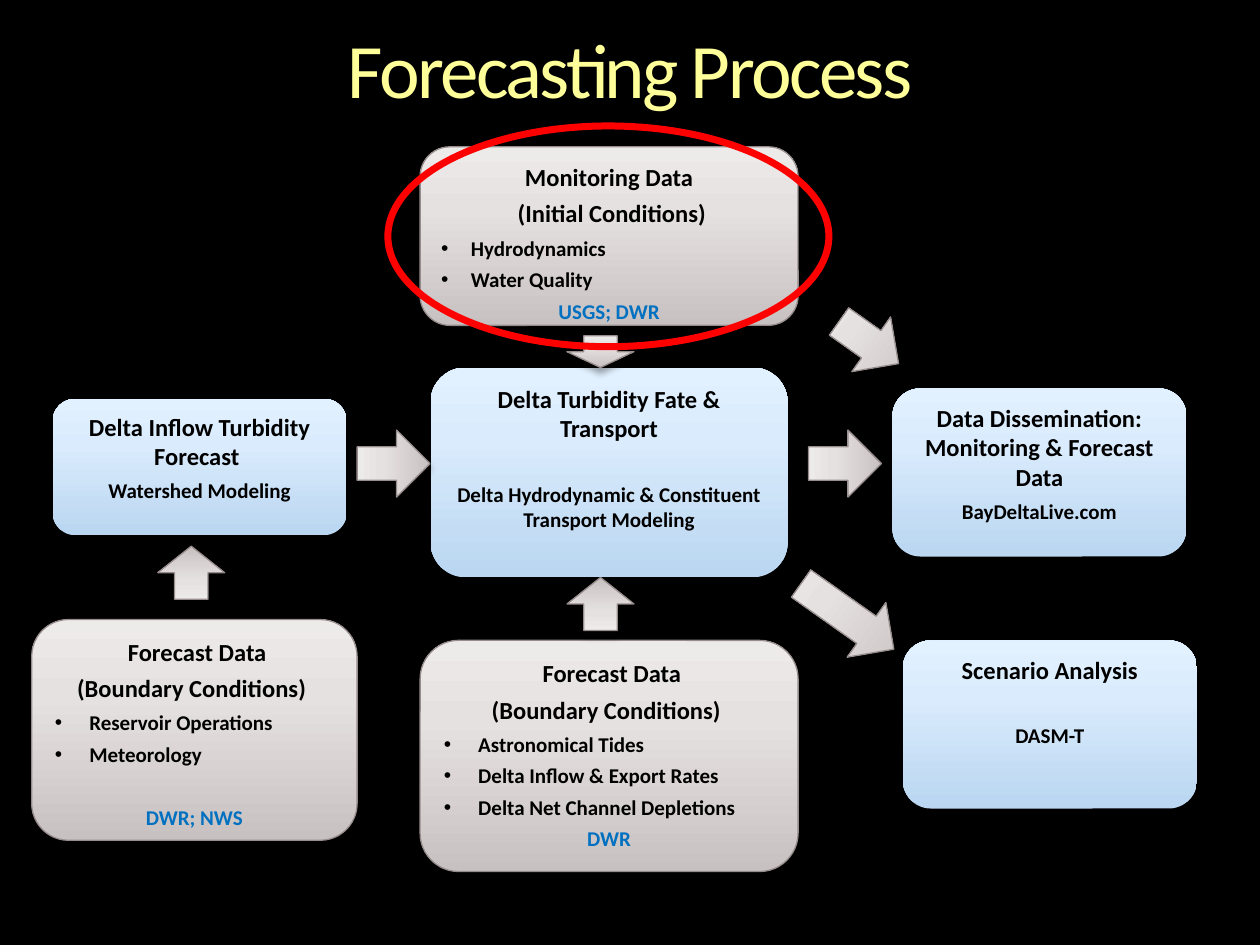
import lxml.etree
import pptx
import pptx.dml.color
import pptx.enum.shapes
import pptx.enum.text
import pptx.oxml.ns
import pptx.util

Cm = pptx.util.Cm
Pt = pptx.util.Pt
RGB = pptx.dml.color.RGBColor
SHAPE = pptx.enum.shapes.MSO_SHAPE
ALIGN = pptx.enum.text.PP_ALIGN
ANCHOR = pptx.enum.text.MSO_ANCHOR
qn = pptx.oxml.ns.qn

BLACK = RGB(0x00, 0x00, 0x00)
YELLOW = RGB(0xFF, 0xFF, 0x99)
RED = RGB(0xFF, 0x00, 0x00)
BLUE = RGB(0x00, 0x70, 0xC0)
EDGE = RGB(0x96, 0x8C, 0x8C)
GREY = (RGB(0xC8, 0xC1, 0xC1), RGB(0xE6, 0xE1, 0xE1), RGB(0xED, 0xEA, 0xEA))
SKY = (RGB(0xBA, 0xD6, 0xF1), RGB(0xD9, 0xEB, 0xFC), RGB(0xE2, 0xF1, 0xFF))
STOPS = (0, 65, 100)

# Text roles: size, colour, bulleted
ROLES = {
    "head": (14, BLACK, False),
    "item": (12, BLACK, True),
    "note": (12, BLACK, False),
    "source": (12, BLUE, False),
}
GAP = 18  # points left free above a line that is set apart

BOXES = [
    (GREY, (8.47, 2.96, 7.62, 3.6), [
        ("head", "Monitoring Data"), ("head", " (Initial Conditions)"),
        ("item", "Hydrodynamics"), ("item", "Water Quality"),
        ("source", "USGS; DWR")]),
    (GREY, (8.47, 12.91, 7.62, 4.66), [
        ("head", " Forecast Data"), ("head", "(Boundary Conditions) "),
        ("item", " Astronomical Tides"),
        ("item", " Delta Inflow & Export Rates"),
        ("item", " Delta Net Channel Depletions"), ("source", "DWR")]),
    (SKY, (1.06, 8.04, 5.93, 2.75), [
        ("head", "Delta Inflow Turbidity Forecast "),
        ("note", "Watershed Modeling")]),
    (SKY, (8.68, 7.41, 7.2, 4.23), [
        ("head", "Delta Turbidity Fate & Transport"),
        ("note", "Delta Hydrodynamic & Constituent Transport Modeling", GAP)]),
    (GREY, (0.64, 12.49, 6.56, 4.45), [
        ("head", " Forecast Data"), ("head", "(Boundary Conditions) "),
        ("item", " Reservoir Operations"), ("item", " Meteorology"),
        ("source", "DWR; NWS", GAP)]),
    (SKY, (17.99, 7.83, 5.93, 3.39), [
        ("head", "Data Dissemination: Monitoring & Forecast Data"),
        ("note", "BayDeltaLive.com")]),
    (SKY, (18.2, 12.91, 5.93, 3.39), [
        ("head", "Scenario Analysis"), ("note", "DASM-T", GAP)]),
]

# Left, top, length, turn in degrees
ARROWS = [
    (11.43, 6.77, 0.64, 0), (11.43, 11.64, 1.07, 180),
    (7.26, 8.61, 1.47, 270), (3.18, 11.01, 1.07, 180),
    (16.36, 8.61, 1.47, 270), (16.84, 6.17, 1.47, 305.3),
    (16.41, 11.28, 2.29, 305.3),
]


class Deck:
    font = "Calibri"
    width = 1.35  # arrow width in cm

    def __init__(self):
        self.prs = pptx.Presentation()
        self.prs.slide_width, self.prs.slide_height = Cm(25.4), Cm(19.05)
        self.slide = self.prs.slides.add_slide(self.prs.slide_layouts[5])
        back = self.slide.background.fill
        back.solid()
        back.fore_color.rgb = BLACK

    def style(self, run, size, color, bold=True):
        run.font.name, run.font.size, run.font.bold = self.font, Pt(size), bold
        run.font.color.rgb = color

    def title(self, text):
        shape = self.slide.shapes.title
        shape.left, shape.top = Cm(0), Cm(0.64)
        shape.width, shape.height = Cm(25.4), Cm(1.7)
        frame = shape.text_frame
        frame.text = text
        frame.auto_size = pptx.enum.text.MSO_AUTO_SIZE.NONE
        frame.vertical_anchor = ANCHOR.TOP
        frame.margin_left = frame.margin_right = Cm(0)
        frame.margin_top = frame.margin_bottom = Cm(0)
        para = frame.paragraphs[0]
        para.alignment, para.line_spacing = ALIGN.CENTER, 0.9
        self.style(para.runs[0], 44, YELLOW, False)
        para.runs[0].font._element.set("spc", "-150")

    def shape(self, kind, place):
        shape = self.slide.shapes.add_shape(kind, *map(Cm, place))
        shape.shadow.inherit = False
        return shape

    def shade(self, shape, tones):
        """Fill with an upward gradient and cast a soft shadow below."""
        shape.fill.gradient()
        shape.fill.gradient_angle = 90
        props = shape._element.spPr
        stops = props.find(".//" + qn("a:gsLst"))
        for old in list(stops):
            stops.remove(old)
        for pos, tone in zip(STOPS, tones):
            stop = lxml.etree.SubElement(stops, qn("a:gs"), pos=str(pos * 1000))
            lxml.etree.SubElement(stop, qn("a:srgbClr"), val=str(tone))
        if tones is GREY:
            shape.line.color.rgb, shape.line.width = EDGE, Pt(0.75)
        else:
            shape.line.fill.background()
        cast = lxml.etree.SubElement(
            props.find(qn("a:effectLst")), qn("a:outerShdw"),
            blurRad=str(Pt(4)), dist=str(Pt(3)), dir="5400000", rotWithShape="0")
        tint = lxml.etree.SubElement(cast, qn("a:srgbClr"), val=str(BLACK))
        lxml.etree.SubElement(tint, qn("a:alpha"), val="35000")

    def box(self, tones, place, lines):
        shape = self.shape(SHAPE.ROUNDED_RECTANGLE, place)
        self.shade(shape, tones)
        frame = shape.text_frame
        frame.word_wrap, frame.vertical_anchor = True, ANCHOR.TOP
        frame.text = "\n".join(line[1] for line in lines)
        for para, (role, _, *gap) in zip(frame.paragraphs, lines):
            size, color, mark = ROLES[role]
            para.alignment = ALIGN.LEFT if mark else ALIGN.CENTER
            para.space_after = Pt(0.3 * size)
            if gap:
                para.space_before = Pt(gap[0])
            if mark:
                self.bullet(para)
            self.style(para.runs[0], size, color)

    def bullet(self, para):
        props = para._p.get_or_add_pPr()
        props.set("marL", str(Cm(0.6)))
        props.set("indent", str(-Cm(0.6)))
        lxml.etree.SubElement(props, qn("a:buFont"), typeface="Arial")
        lxml.etree.SubElement(props, qn("a:buChar"), char="•")

    def arrow(self, left, top, length, turn):
        shape = self.shape(SHAPE.DOWN_ARROW, (left, top, self.width, length))
        shape.rotation = turn
        self.shade(shape, GREY)

    def ring(self, *place):
        shape = self.shape(SHAPE.OVAL, place)
        shape.fill.background()
        shape.line.color.rgb, shape.line.width = RED, Pt(4)


def main():
    deck = Deck()
    deck.title("Forecasting Process")
    for box in BOXES:
        deck.box(*box)
    for arrow in ARROWS:
        deck.arrow(*arrow)
    deck.ring(7.82, 2.54, 8.89, 4.45)
    deck.prs.save("out.pptx")


if __name__ == "__main__":
    main()
